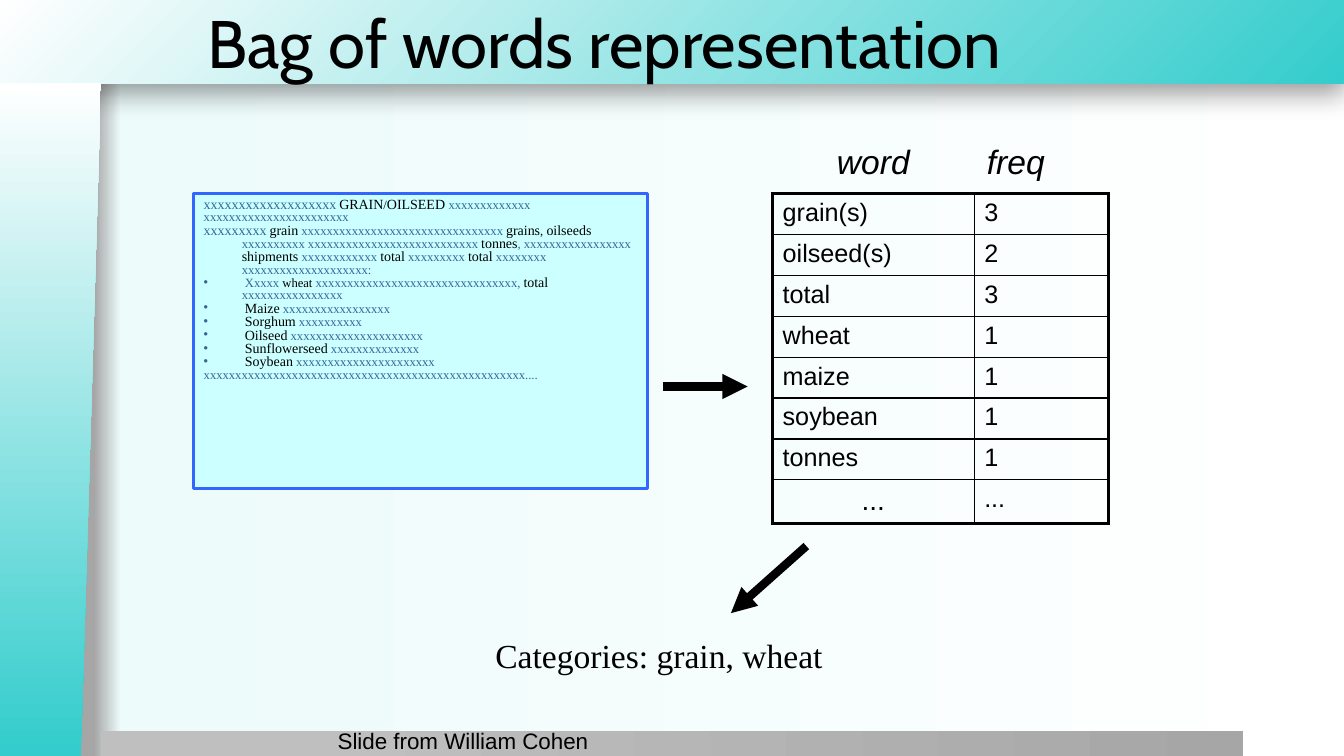
"""Build the slide that shows a bag of words representation."""
from pptx import Presentation
from pptx.dml.color import RGBColor as RGB
from pptx.enum.shapes import MSO_CONNECTOR as CONN, MSO_SHAPE as SHAPE
from pptx.enum.text import MSO_ANCHOR as ANCHOR, MSO_AUTO_SIZE as FIT, PP_ALIGN as AL
from pptx.oxml import parse_xml
from pptx.oxml.ns import nsdecls, qn
from pptx.util import Cm, Pt

BLACK = RGB(0x00, 0x00, 0x00)
WHITE = RGB(0xFF, 0xFF, 0xFF)
TEAL = RGB(0x34, 0xCC, 0xCC)
MIST = RGB(0xED, 0xFB, 0xFB)
GREY = RGB(0xA6, 0xA6, 0xA6)
SILVER = RGB(0xBF, 0xBF, 0xBF)
PALE_CYAN = RGB(0xCC, 0xFF, 0xFF)
FRAME_BLUE = RGB(0x33, 0x66, 0xFF)
STEEL = RGB(0x33, 0x66, 0x99)

SERIF = "Times New Roman"
FILLER = {"name": SERIF, "size": Pt(9), "color": STEEL}
FILLER_BIG = {**FILLER, "size": Pt(10)}
WORD = {"name": SERIF, "size": Pt(10), "color": BLACK}
WORD_SMALL = {**WORD, "size": Pt(9)}
TITLE = {"name": "Cabin", "size": Pt(48), "color": BLACK}
CELL = {"name": "Arial", "size": Pt(18), "color": BLACK}
CELL_BIG = {**CELL, "size": Pt(20)}
HEADING = {"name": "Arial", "size": Pt(24), "italic": True, "color": BLACK}
RESULT = {"name": SERIF, "size": Pt(24), "color": BLACK}
CREDIT = {"name": "Arial", "size": Pt(16), "color": BLACK}

HEADLINE = [
    [("x" * 19, FILLER_BIG), (" ", FILLER), ("GRAIN", WORD), ("/", WORD_SMALL),
     ("OILSEED ", WORD), ("x" * 13, FILLER)],
    [("x" * 23, FILLER)],
    [("x" * 9, FILLER_BIG), (" ", FILLER), ("grain", WORD),
     (f" {'x' * 32} ", FILLER), ("grains", WORD), (", ", WORD_SMALL),
     ("oilseeds", WORD), (f" {'x' * 10} {'x' * 27} ", FILLER), ("tonnes", WORD),
     (f", {'x' * 17} ", FILLER), ("shipments", WORD), (f" {'x' * 12} ", FILLER),
     ("total", WORD), (f" {'x' * 9} ", FILLER), ("total", WORD),
     (f" {'x' * 8} {'x' * 20}:", FILLER)],
]
WHEAT = [(" Xxxxx ", FILLER), ("wheat", WORD_SMALL), (f" {'x' * 32}, ", FILLER),
         ("total", WORD), (f" {'x' * 16}", FILLER)]
CROPS = [("Maize", 17), ("Sorghum", 10), ("Oilseed", 21),
         ("Sunflowerseed", 14), ("Soybean", 22)]
ENDING = [("x" * 51 + "....", FILLER)]
COUNTS = [("grain(s)", "3"), ("oilseed(s)", "2"), ("total", "3"), ("wheat", "1"),
          ("maize", "1"), ("soybean", "1"), ("tonnes", "1"), ("...", "...")]


def cm(*values):
    """Turn numbers into centimetre lengths."""
    return [Cm(v) for v in values]


def add_run(p, text, fmt):
    """Add a run and set its font from a dict."""
    r = p.add_run()
    r.text = text
    for key, value in fmt.items():
        if key == "color":
            r.font.color.rgb = value
        else:
            setattr(r.font, key, value)


def place(sp, box):
    """Move and size a shape."""
    for key, value in zip(("left", "top", "width", "height"), cm(*box)):
        setattr(sp, key, value)


def set_gradient(fill, element, stops, direction='<a:lin ang="0" scaled="0"/>'):
    """Give a fill a gradient with any number of stops."""
    fill.gradient()
    old = element.find(".//" + qn("a:gradFill"))
    marks = "".join(f'<a:gs pos="{pos * 1000}"><a:srgbClr val="{color}"/></a:gs>'
                    for pos, color in stops)
    new = parse_xml(f'<a:gradFill {nsdecls("a")} rotWithShape="1">'
                    f'<a:gsLst>{marks}</a:gsLst>{direction}</a:gradFill>')
    old.getparent().replace(old, new)


def add_panel(slide, kind, box, stops, **gradient):
    """Add a borderless decorative shape with a gradient."""
    sp = slide.shapes.add_shape(kind, *cm(*box))
    sp.shadow.inherit = False
    sp.line.fill.background()
    set_gradient(sp.fill, sp._element, stops, **gradient)
    return sp


def add_frame(slide):
    """Draw the background, the top band, the foot bar and the side panel."""
    set_gradient(slide.background.fill, slide._element,
                 [(7, GREY), (9, MIST), (100, WHITE)])
    band = add_panel(slide, SHAPE.RECTANGLE, (-0.02, 0, 33.89, 2.11),
                     [(0, TEAL), (100, WHITE)],
                     direction='<a:path path="circle"><a:fillToRect l="100000" '
                               't="100000"/></a:path>')
    band._element.spPr.find(qn("a:effectLst")).append(parse_xml(
        f'<a:outerShdw {nsdecls("a")} blurRad="{Pt(20)}" dist="{Pt(6)}" '
        f'dir="5400000" rotWithShape="0"><a:srgbClr val="{BLACK}">'
        '<a:alpha val="40000"/></a:srgbClr></a:outerShdw>'))
    add_panel(slide, SHAPE.RECTANGLE, (2.54, 18.42, 28.78, 0.65),
              [(20, SILVER), (100, GREY)])
    side = add_panel(slide, SHAPE.FLOWCHART_MANUAL_INPUT, (-7.21, 9.31, 16.97, 2.54),
                     [(1, TEAL), (100, WHITE)])
    side.rotation = 270
    side._element.spPr.xfrm.set("flipV", "1")


def fill_title(slide, text):
    """Place the title above the band."""
    sp = slide.shapes.title
    slide.shapes._spTree.append(sp._element)
    place(sp, (4.98, 0, 28.9, 2.11))
    tf = sp.text_frame
    tf.auto_size, tf.vertical_anchor = FIT.NONE, ANCHOR.MIDDLE
    p = tf.paragraphs[0]
    p.alignment = AL.LEFT
    add_run(p, text, TITLE)


def fill_document(slide):
    """Fill the body placeholder with the masked news text."""
    sp = slide.placeholders[1]
    slide.shapes._spTree.append(sp._element)
    place(sp, (4.88, 4.88, 11.43, 7.42))
    sp.fill.solid()
    sp.fill.fore_color.rgb = PALE_CYAN
    sp.line.color.rgb, sp.line.width = FRAME_BLUE, Pt(2.25)
    tf = sp.text_frame
    tf.auto_size, tf.vertical_anchor = FIT.NONE, ANCHOR.TOP
    crops = [[(" ", FILLER), (crop, WORD), (" " + "x" * n, FILLER)] for crop, n in CROPS]
    listed = [WHEAT, *crops]
    for i, runs in enumerate([*HEADLINE, *listed, ENDING]):
        p = tf.add_paragraph() if i else tf.paragraphs[0]
        for key, value in {"line_spacing": 0.8, "space_before": Pt(0),
                           "alignment": AL.LEFT}.items():
            setattr(p, key, value)
        pPr = p._p.get_or_add_pPr()
        pPr.set("marL", str(Cm(0.96)))
        pPr.set("indent", str(Cm(-0.96)))
        bullet = 'buChar char="•"' if runs in listed else "buNone"
        pPr.append(parse_xml(f'<a:{bullet} {nsdecls("a")}/>'.replace(
            'char="•" xmlns', 'char="•" xmlns')))
        for text, fmt in runs:
            add_run(p, text, fmt)


def add_label(slide, box, text, fmt, align=AL.CENTER, wrap=True):
    """Add a one-line text box."""
    tf = slide.shapes.add_textbox(*cm(*box)).text_frame
    tf.word_wrap = wrap
    p = tf.paragraphs[0]
    p.alignment = align
    add_run(p, text, fmt)


def add_arrow(slide, ends):
    """Add a thick arrow."""
    line = slide.shapes.add_connector(CONN.STRAIGHT, *cm(*ends))
    line.line.color.rgb, line.line.width = BLACK, Pt(6)
    line.line._get_or_add_ln().append(
        parse_xml(f'<a:tailEnd {nsdecls("a")} type="triangle"/>'))
    line._element.spPr.append(parse_xml(f'<a:effectLst {nsdecls("a")}/>'))


def add_counts(slide):
    """Add the table of word counts with a heavy outer border."""
    last = len(COUNTS) - 1
    table = slide.shapes.add_table(len(COUNTS), 2, *cm(19.47, 4.88, 8.47, 8.24)).table
    table.first_row = table.horz_banding = False
    for col, width in zip(table.columns, cm(5.08, 3.39)):
        col.width = width
    for i, row in enumerate(COUNTS):
        table.rows[i].height = Cm(1.03)
        for j, text in enumerate(row):
            cell = table.cell(i, j)
            outer = {"L": j == 0, "R": j == 1, "T": i == 0, "B": i == last}
            for side, heavy in outer.items():
                cell._tc.get_or_add_tcPr().append(parse_xml(
                    f'<a:ln{side} {nsdecls("a")} w="{Pt(2.25 if heavy else 1)}">'
                    f'<a:solidFill><a:srgbClr val="{BLACK}"/></a:solidFill></a:ln{side}>'))
            cell.fill.background()
            p = cell.text_frame.paragraphs[0]
            dots = i == last and j == 0
            p.alignment = AL.CENTER if dots else AL.LEFT
            add_run(p, text, CELL_BIG if dots else CELL)


def main():
    """Build and save the slide."""
    prs = Presentation()
    prs.slide_width, prs.slide_height = cm(33.87, 19.05)
    s = prs.slides.add_slide(prs.slide_layouts[1])
    add_frame(s)
    fill_title(s, "Bag of words representation")
    fill_document(s)
    add_label(s, (10.16, 15.88, 12.9, 1.27), "Categories: grain, wheat", RESULT)
    add_arrow(s, (20.32, 13.76, 18.42, 15.45))
    add_counts(s)
    add_arrow(s, (16.72, 9.74, 18.84, 9.74))
    add_label(s, (20.83, 3.43, 2.36, 1.27), "word", HEADING, wrap=False)
    add_label(s, (24.61, 3.43, 1.98, 1.27), "freq", HEADING, wrap=False)
    add_label(s, (8.26, 18.21, 7.2, 0.84), "Slide from William Cohen", CREDIT, AL.LEFT)
    prs.save("out.pptx")


if __name__ == "__main__":
    main()
